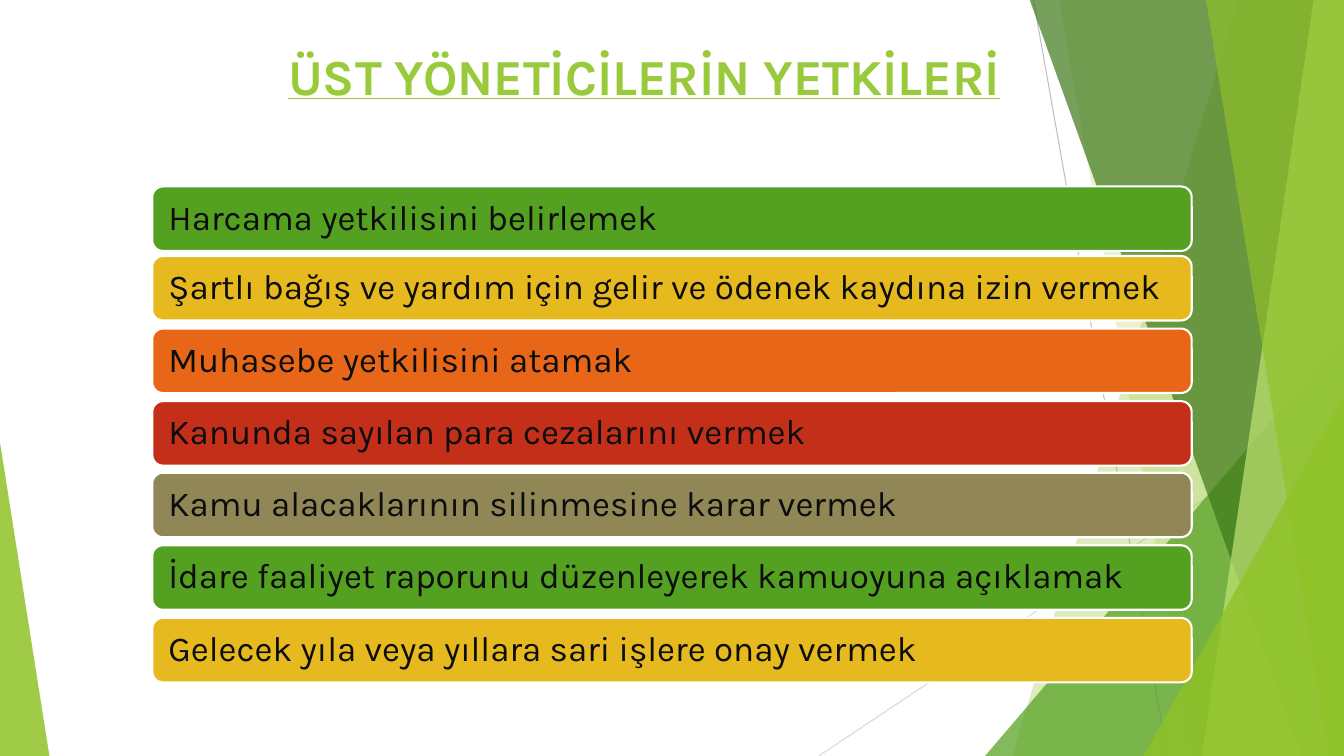
"""Builds the slide on the powers of senior managers."""
from dataclasses import dataclass

from lxml.etree import SubElement
from pptx import Presentation
from pptx.dml.color import RGBColor
from pptx.enum.shapes import MSO_CONNECTOR, MSO_SHAPE
from pptx.enum.text import MSO_ANCHOR, MSO_AUTO_SIZE, PP_ALIGN
from pptx.oxml.ns import qn
from pptx.util import Pt

PX = 9144
WIDTH, HEIGHT = 1333, 750


@dataclass(frozen=True)
class Theme:
    font: str = "Karla"
    title_size: int = 36
    bar_size: int = 25
    title: str = "99CA3C"
    text: str = "0D0D0D"
    white: str = "FFFFFF"
    lime: str = "90C226"
    pale: str = "C0E474"
    green: str = "54A021"
    forest: str = "3F7819"
    gold: str = "E6B91E"
    orange: str = "E76618"
    red: str = "C42F1A"
    olive: str = "918655"
    gray: str = "BFBFBF"
    silver: str = "D9D9D9"


class SlideBuilder:
    def __init__(self, prs, theme):
        self.theme = theme
        self.s = prs.slides.add_slide(prs.slide_layouts[5])

    def fill(self, sp, color, alpha=100):
        sp.shadow.inherit = False
        sp.fill.solid()
        sp.fill.fore_color.rgb = RGBColor.from_string(color)
        sp.line.fill.background()
        if alpha < 100:
            clr = sp.element.spPr.find(qn("a:solidFill")).find(qn("a:srgbClr"))
            SubElement(clr, qn("a:alpha")).set("val", str(alpha * 1000))

    def run(self, p, text, size, color):
        r = p.add_run()
        r.text = text
        r.font.name = self.theme.font
        r.font.size = Pt(size)
        r.font.color.rgb = RGBColor.from_string(color)
        return r

    def line(self, x1, y1, x2, y2, color):
        ends = (v * PX for v in (x1, y1, x2, y2))
        cxn = self.s.shapes.add_connector(MSO_CONNECTOR.STRAIGHT, *ends)
        cxn.line.color.rgb = RGBColor.from_string(color)
        cxn.line.width = Pt(0.75)
        SubElement(cxn.element.spPr, qn("a:effectLst"))

    def band(self, top_x, bottom_x, color, alpha):
        fb = self.s.shapes.build_freeform(top_x, -1, scale=PX)
        fb.add_line_segments([(WIDTH, -1), (WIDTH, HEIGHT), (bottom_x, HEIGHT)])
        self.fill(fb.convert_to_shape(), color, alpha)

    def shape(self, kind, x, y, w, h):
        return self.s.shapes.add_shape(kind, x * PX, y * PX, w * PX, h * PX)

    def triangle(self, x, y, w, apex, color, alpha):
        sp = self.shape(MSO_SHAPE.ISOSCELES_TRIANGLE, x, y, w, HEIGHT - y)
        sp.adjustments[0] = apex
        self.fill(sp, color, alpha)

    def title(self, text, x, y, w, h):
        sp = self.s.shapes.title
        sp.element.getparent().append(sp.element)
        sp.left, sp.top, sp.width, sp.height = (v * PX for v in (x, y, w, h))
        tf = sp.text_frame
        tf.word_wrap = True
        tf.auto_size = MSO_AUTO_SIZE.NONE
        tf.vertical_anchor = MSO_ANCHOR.TOP
        p = tf.paragraphs[0]
        p.alignment = PP_ALIGN.CENTER
        r = self.run(p, text, self.theme.title_size, self.theme.title)
        r.font.bold = r.font.underline = True

    def bar(self, text, y, color):
        sp = self.shape(MSO_SHAPE.ROUNDED_RECTANGLE, 151, y, 1031, 64)
        self.fill(sp, color)
        sp.line.color.rgb = RGBColor.from_string(self.theme.white)
        sp.line.width = Pt(1.5)
        tf = sp.text_frame
        tf.word_wrap = True
        tf.vertical_anchor = MSO_ANCHOR.MIDDLE
        tf.margin_left = tf.margin_right = 13 * PX
        tf.margin_top = tf.margin_bottom = 10 * PX
        p = tf.paragraphs[0]
        p.alignment = PP_ALIGN.LEFT
        p.line_spacing = 0.9
        self.run(p, text, self.theme.bar_size, self.theme.text)


def main():
    prs = Presentation()
    prs.slide_width, prs.slide_height = WIDTH * PX, HEIGHT * PX
    t = Theme()
    b = SlideBuilder(prs, t)

    b.line(1025, 0, 1158, HEIGHT, t.gray)
    b.line(WIDTH, 403, 812, HEIGHT, t.silver)
    b.band(1228, 1004, t.lime, 30)
    b.band(1050, 1183, t.lime, 20)
    b.triangle(977, 333, 356, 1, t.green, 72)
    b.band(1021, 1291, t.forest, 70)
    b.band(1303, 1192, t.pale, 70)
    b.band(1196, 1318, t.lime, 65)
    b.triangle(1134, 393, 199, 1, t.lime, 80)
    b.triangle(0, 439, 49, 0, t.lime, 85)

    b.title("ÜST YÖNETİCİLERİN YETKİLERİ", 64, 40, 1150, 115)

    powers = [
        ("Harcama yetkilisini belirlemek", t.green),
        ("Şartlı bağış ve yardım için gelir ve ödenek kaydına izin vermek", t.gold),
        ("Muhasebe yetkilisini atamak", t.orange),
        ("Kanunda sayılan para cezalarını vermek", t.red),
        ("Kamu alacaklarının silinmesine karar vermek", t.olive),
        ("İdare faaliyet raporunu düzenleyerek kamuoyuna açıklamak", t.green),
        ("Gelecek yıla veya yıllara sari işlere onay vermek", t.gold),
    ]
    tops = [185] + [254 + round(71.8 * i) for i in range(len(powers) - 1)]
    for (text, color), top in zip(powers, tops):
        b.bar(text, top, color)

    prs.save("out.pptx")


if __name__ == "__main__":
    main()
